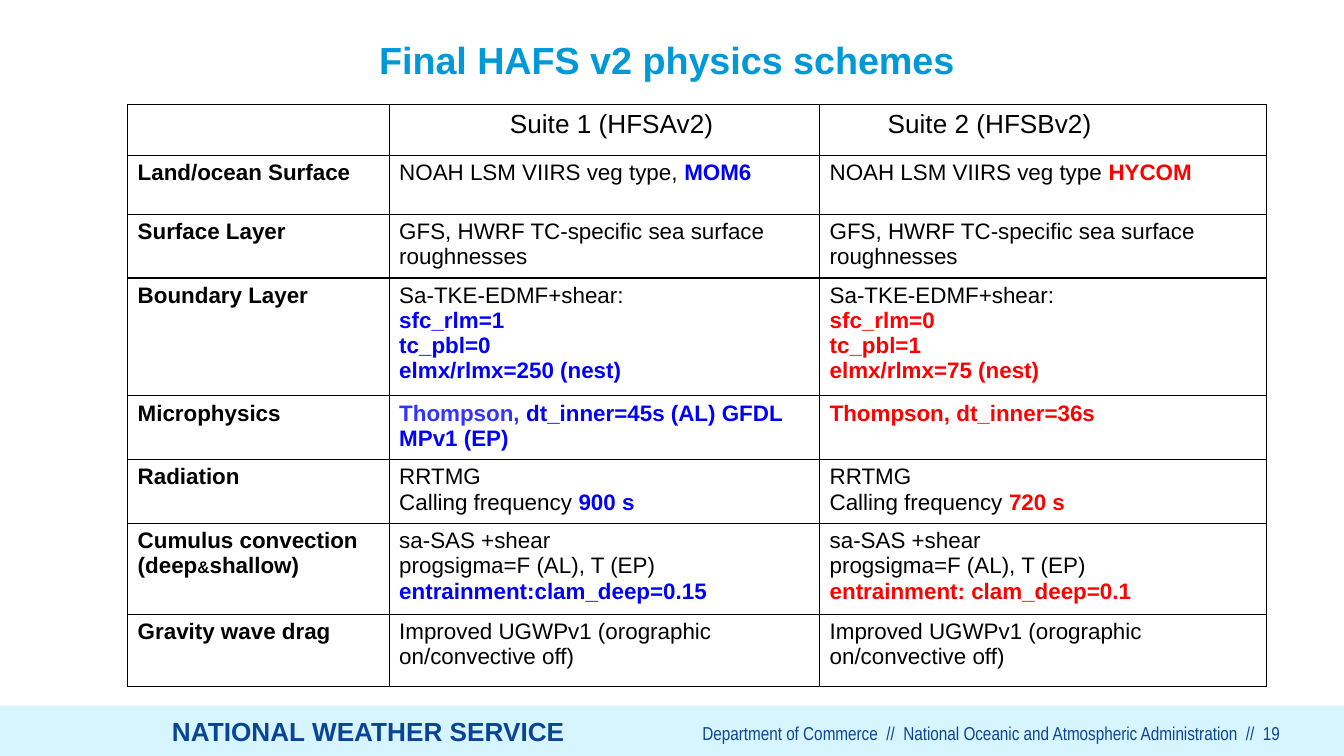
import pptx
import pptx.dml.color
import pptx.enum.shapes
import pptx.enum.text
import pptx.oxml
import pptx.oxml.ns
import pptx.util

Pt = pptx.util.Pt
ALIGN = pptx.enum.text.PP_ALIGN

COLORS = {
    "title": "0099D8", "band": "D6F5FF", "service": "0A4595", "department": "0B4596",
    "black": "000000", "blue": "0000FF", "soft blue": "3333FF", "red": "FF0000",
}

STYLES = {
    "head": (14, "black", False),
    "label": (12, "black", True),
    "small": (9, "black", True),
    "plain": (12, "black", False),
    "blue": (12, "blue", True),
    "soft": (12, "soft blue", True),
    "red": (12, "red", True),
}

COLUMN_WIDTHS = [140.1, 230.6, 239.3]
ROW_HEIGHTS = [27.3, 31.6, 33.8, 58.9, 32.7, 32.1, 45.5, 38.6]
SURFACE = [[("GFS, HWRF TC-specific sea surface roughnesses", "plain")]]
DRAG = [[("Improved UGWPv1 (orographic on/convective off)", "plain")]]


def label(text):
    """Return the paragraphs of a bold row label."""
    return [[(text, "label")]]


def boundary(rlm, pbl, length, accent):
    """Return the boundary layer settings of one suite."""
    settings = [f"sfc_rlm={rlm}", f"tc_pbl={pbl}", f"elmx/rlmx={length} (nest)"]
    return [[("Sa-TKE-EDMF+shear:", "plain")]] + [[(text, accent)] for text in settings]


def radiation(interval, accent):
    """Return the radiation settings of one suite."""
    return [[("RRTMG", "plain")], [("Calling frequency ", "plain"), (interval, accent)]]


def cumulus(entrainment, accent):
    """Return the cumulus convection settings of one suite."""
    return [[("sa-SAS +shear", "plain")], [("progsigma=F (AL), T (EP)", "plain")],
            [(entrainment, accent)]]


SCHEMES = [
    [[], [[("Suite 1 (HFSAv2)", "head")]], [[("Suite 2 (HFSBv2)", "head")]]],
    [label("Land/ocean Surface"),
     [[("NOAH LSM VIIRS veg type, ", "plain"), ("MOM6", "blue")]],
     [[("NOAH LSM VIIRS veg type ", "plain"), ("HYCOM", "red")]]],
    [label("Surface Layer"), SURFACE, SURFACE],
    [label("Boundary Layer"), boundary(1, 0, 250, "blue"), boundary(0, 1, 75, "red")],
    [label("Microphysics"),
     [[("Thompson, ", "soft"), ("dt_inner=45s (AL) GFDL MPv1 (EP)", "blue")]],
     [[("Thompson, dt_inner=36s", "red")]]],
    [label("Radiation"), radiation("900 s", "blue"), radiation("720 s", "red")],
    [[[("Cumulus convection (deep", "label"), ("&", "small"), ("shallow)", "label")]],
     cumulus("entrainment:clam_deep=0.15", "blue"),
     cumulus("entrainment: clam_deep=0.1", "red")],
    [label("Gravity wave drag"), DRAG, DRAG],
]


def rgb(name):
    """Look up a named colour."""
    return pptx.dml.color.RGBColor.from_string(COLORS[name])


def add_run(paragraph, text, size, color, bold=False, font="Arial"):
    """Append one formatted run to a paragraph."""
    run = paragraph.add_run()
    run.text = text
    run.font.name = font
    run.font.size = Pt(size)
    run.font.bold = bold
    run.font.color.rgb = rgb(color)


def set_margins(frame, margin):
    """Give a text frame the same margin on all sides and let it wrap."""
    frame.word_wrap = True
    frame.margin_left = frame.margin_right = Pt(margin)
    frame.margin_top = frame.margin_bottom = Pt(margin)


def place_title(slide, left, top, width, height):
    """Move the title placeholder into its box and fill it."""
    title = slide.shapes.title
    title.left, title.top, title.width, title.height = map(Pt, (left, top, width, height))
    frame = title.text_frame
    set_margins(frame, 7.2)
    frame.auto_size = pptx.enum.text.MSO_AUTO_SIZE.NONE
    frame.vertical_anchor = pptx.enum.text.MSO_ANCHOR.MIDDLE
    heading = frame.paragraphs[0]
    heading.alignment = ALIGN.CENTER
    heading.line_spacing = 0.9
    add_run(heading, "Final HAFS v2 physics schemes ", 20.2, "title", True)


def outline_cell(cell):
    """Draw a thin black border on each side of a cell without fill."""
    cell.fill.background()
    properties = cell._tc.get_or_add_tcPr()
    for position, side in enumerate(("lnL", "lnR", "lnT", "lnB")):
        border = pptx.oxml.parse_xml(
            f'<a:{side} {pptx.oxml.ns.nsdecls("a")} w="{Pt(0.75)}"><a:solidFill>'
            f'<a:srgbClr val="{COLORS["black"]}"/></a:solidFill></a:{side}>')
        properties.insert(position, border)


def fill_cell(cell, paragraphs):
    """Write paragraphs of styled runs into a cell."""
    cell.margin_left = cell.margin_right = Pt(5.4)
    cell.margin_top = cell.margin_bottom = Pt(2.7)
    outline_cell(cell)
    for index, runs in enumerate(paragraphs):
        frame = cell.text_frame
        paragraph = frame.add_paragraph() if index else frame.paragraphs[0]
        for text, style in runs:
            add_run(paragraph, text, *STYLES[style])


def place_schemes(slide, left, top, width, height):
    """Build the table that compares the two physics suites."""
    schemes = slide.shapes.add_table(
        len(SCHEMES), len(COLUMN_WIDTHS), Pt(left), Pt(top), Pt(width), Pt(height)).table
    schemes.first_row = schemes.horz_banding = False
    for column, column_width in zip(schemes.columns, COLUMN_WIDTHS):
        column.width = Pt(column_width)
    for row, row_height, contents in zip(schemes.rows, ROW_HEIGHTS, SCHEMES):
        row.height = Pt(row_height)
        for cell, paragraphs in zip(row.cells, contents):
            fill_cell(cell, paragraphs)
    first_suite, second_suite = schemes.cell(0, 1), schemes.cell(0, 2)
    first_suite.text_frame.paragraphs[0].alignment = ALIGN.CENTER
    first_suite.margin_left = Pt(13.2)
    second_suite.margin_left = Pt(36.5)


def place_footer(slide, left, top, width, height):
    """Draw the footer band with the service name and department line."""
    band = slide.shapes.add_shape(
        pptx.enum.shapes.MSO_SHAPE.RECTANGLE, Pt(left), Pt(top), Pt(width), Pt(height))
    band.shadow.inherit = False
    band.fill.solid()
    band.fill.fore_color.rgb = rgb("band")
    band.line.fill.background()

    service = slide.shapes.add_textbox(Pt(left + 85), Pt(top - 2), Pt(286.6), Pt(36.7))
    set_margins(service.text_frame, 7.2)
    add_run(service.text_frame.paragraphs[0], "NATIONAL WEATHER SERVICE", 14, "service", True)

    department = slide.shapes.add_textbox(
        Pt(left + 115.2), Pt(top + 8.6), Pt(570.2), Pt(9.4))
    set_margins(department.text_frame, 0)
    line = department.text_frame.paragraphs[0]
    line.alignment = ALIGN.RIGHT
    add_run(line, "Department of Commerce  //  National Oceanic and Atmospheric "
            "Administration  //  19", 10, "department", font="Arial Narrow")


def main():
    """Build and save the slide."""
    deck = pptx.Presentation()
    deck.slide_width, deck.slide_height = Pt(720), Pt(405)
    slide = deck.slides.add_slide(deck.slide_layouts[5])
    place_footer(slide, 0, 378, 720, 27)
    place_schemes(slide, 68.4, 55.9, sum(COLUMN_WIDTHS), sum(ROW_HEIGHTS))
    place_title(slide, 24.5, 10.8, 671, 45.4)
    deck.save("out.pptx")


if __name__ == "__main__":
    main()
